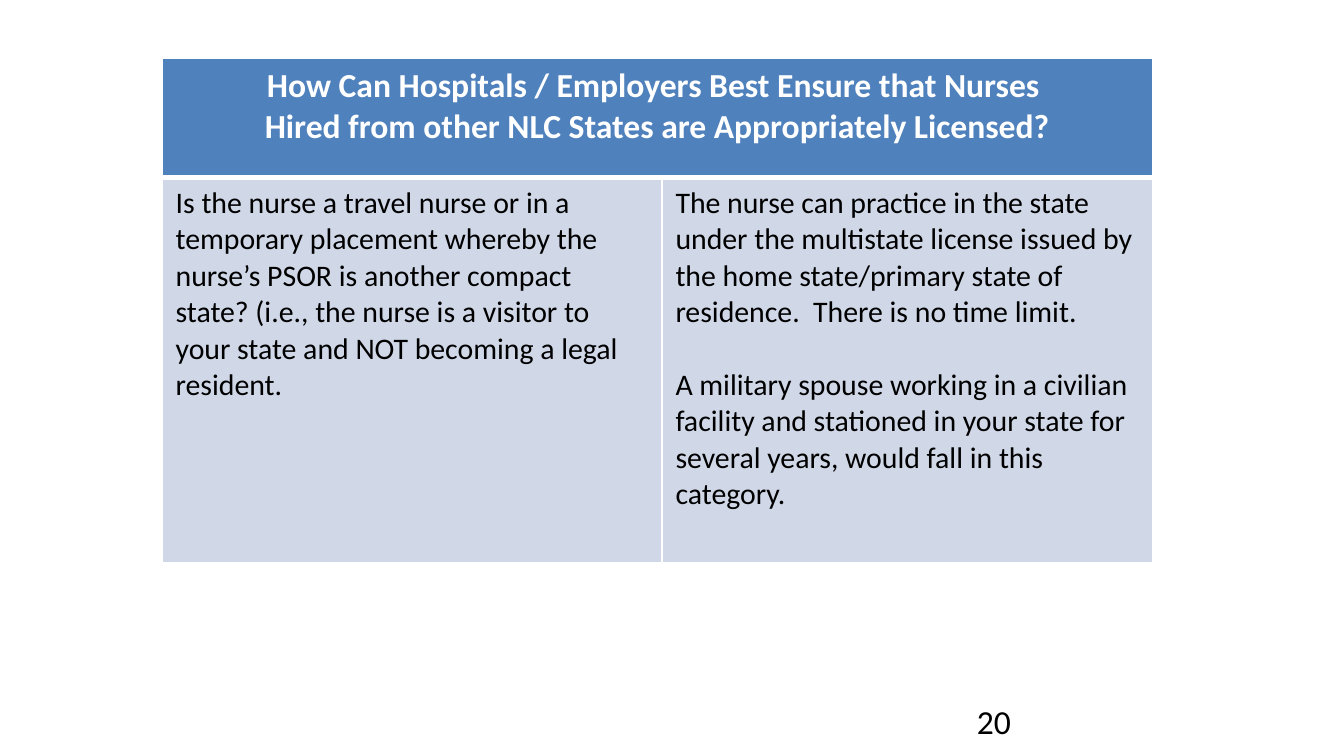
import pptx
import pptx.dml.color
import pptx.enum.text
import pptx.oxml
import pptx.oxml.ns
import pptx.util

Pt = pptx.util.Pt
COLORS = {"header": "4F81BD", "body": "D0D8E8", "white": "FFFFFF", "black": "000000"}
HEADER = ["How Can Hospitals / Employers Best Ensure that Nurses ",
          "Hired from other NLC States are Appropriately Licensed?"]
ANSWERS = [
    ["Is the nurse a travel nurse or in a temporary placement whereby the nurse’s PSOR "
     "is another compact state? (i.e., the nurse is a visitor to your state and NOT "
     "becoming a legal resident."],
    ["The nurse can practice in the state under the multistate license issued by the home "
     "state/primary state of residence.  There is no time limit.",
     "A military spouse working in a civilian facility and stationed in your state for "
     "several years, would fall in this category."],
]


def rgb(name):
    """Return the named colour."""
    return pptx.dml.color.RGBColor.from_string(COLORS[name])


def write(tf, paragraphs, size, color, bold=False, align=None, gap=0):
    """Fill a text frame with equally styled paragraphs."""
    tf.word_wrap = True
    tf.text = "\n".join(paragraphs)
    for i, p in enumerate(tf.paragraphs):
        p.alignment = align
        p.space_before = Pt(gap if i else 0)
        for r in p.runs:
            r.font.name = "Calibri"
            r.font.size = Pt(size)
            r.font.bold = bold
            r.font.color.rgb = rgb(color)


def style_cell(cell, fill, top=1, bottom=1):
    """Give a cell white borders and a solid fill."""
    tcPr = cell._tc.get_or_add_tcPr()
    for side, width in (("L", 1), ("R", 1), ("T", top), ("B", bottom)):
        tcPr.append(pptx.oxml.parse_xml(
            f'<a:ln{side} {pptx.oxml.ns.nsdecls("a")} w="{Pt(width)}"><a:solidFill>'
            f'<a:srgbClr val="{COLORS["white"]}"/></a:solidFill></a:ln{side}>'))
    cell.fill.solid()
    cell.fill.fore_color.rgb = rgb(fill)


def add_license_table(s, left, top, widths, heights):
    """Place the licensing table with its merged header."""
    table = s.shapes.add_table(len(heights), len(widths), Pt(left), Pt(top),
                               Pt(sum(widths)), Pt(sum(heights))).table
    for row, height in zip(table.rows, heights):
        row.height = Pt(height)
    for col, (width, answer) in enumerate(zip(widths, ANSWERS)):
        table.columns[col].width = Pt(width)
        style_cell(table.cell(0, col), "header", bottom=3)
        cell = table.cell(1, col)
        style_cell(cell, "body", top=3)
        write(cell.text_frame, answer, 16, "black", gap=19.5)
    header = table.cell(0, 0)
    header.merge(table.cell(0, len(widths) - 1))
    write(header.text_frame, HEADER, 18, "white", True, pptx.enum.text.PP_ALIGN.CENTER)


def add_page_number(s, left, top, width, height):
    """Place the page number."""
    tf = s.shapes.add_textbox(Pt(left), Pt(top), Pt(width), Pt(height)).text_frame
    tf.margin_top = tf.margin_bottom = 0
    tf.vertical_anchor = pptx.enum.text.MSO_ANCHOR.MIDDLE
    write(tf, ["20"], 18, "black")


def main():
    """Build and save the slide."""
    prs = pptx.Presentation()
    prs.slide_width, prs.slide_height = Pt(720), Pt(405)
    s = prs.slides.add_slide(prs.slide_layouts[6])
    add_license_table(s, 86.9, 31.3, [267.8, 262.8], [64, 206.5])
    add_page_number(s, 516.2, 375.4, 168, 21.6)
    prs.save("out.pptx")


if __name__ == "__main__":
    main()
